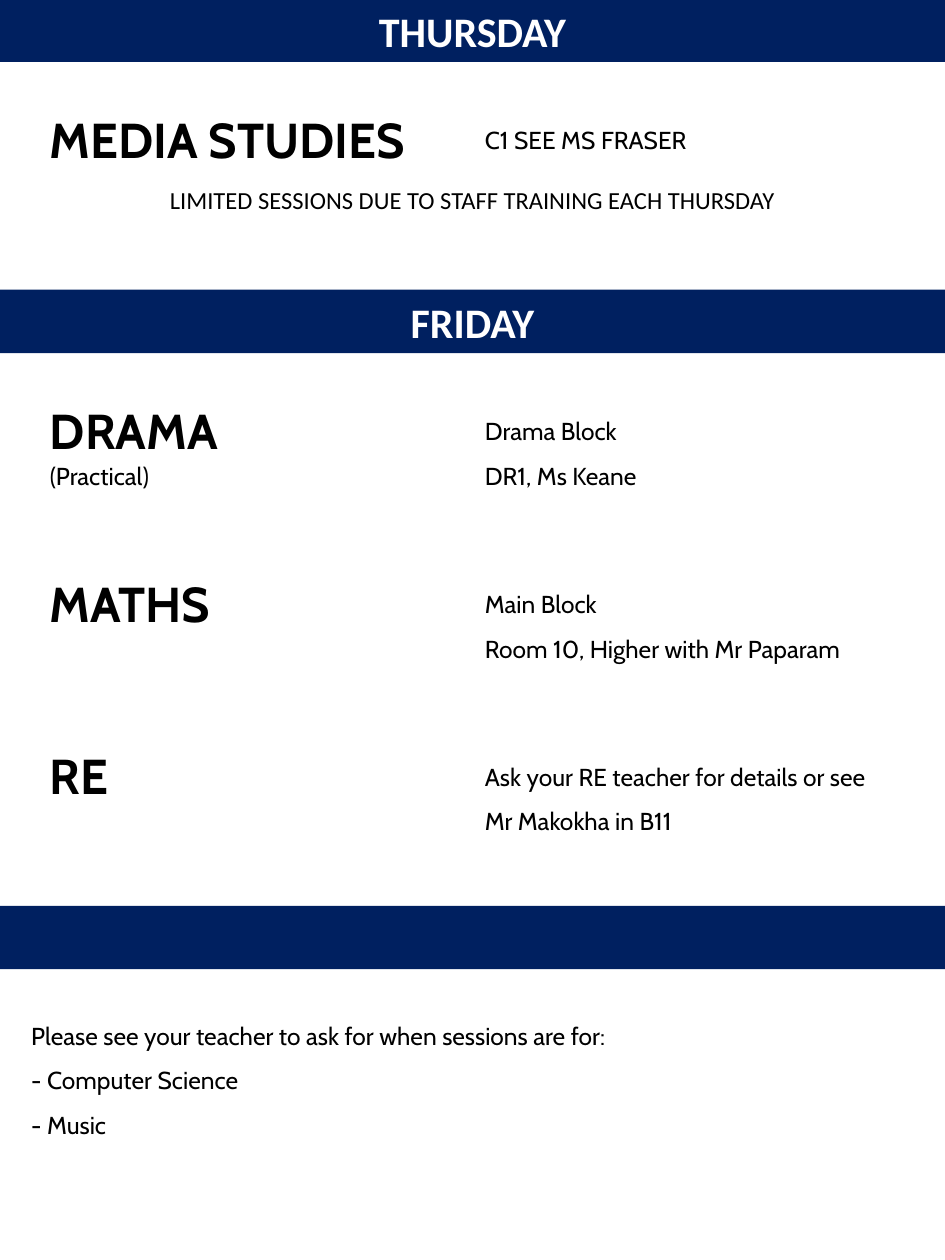
from pptx import Presentation
from pptx.dml.color import RGBColor
from pptx.enum.shapes import MSO_SHAPE as SHAPE
from pptx.enum.text import MSO_ANCHOR as ANCHOR, PP_ALIGN as ALIGN
from pptx.util import Cm, Pt

NAVY, WHITE, BLACK = "002060", "FFFFFF", "000000"
WIDTH, HEIGHT = 19.05, 25.4
BAR_H = 1.28
COL_W = 8.77
SPACER_H = 1.42


def color(hex_code):
    """Return the colour for a hex string."""
    return RGBColor.from_string(hex_code)


def write(tf, lines, align=ALIGN.LEFT, spacing=None):
    """Fill a text frame with (text, size, bold, font, colour) lines."""
    for i, (text, size, bold, name, hex_code) in enumerate(lines):
        p = tf.paragraphs[0] if i == 0 else tf.add_paragraph()
        p.text = text
        p.alignment = align
        p.line_spacing = spacing
        p.font.size = Pt(size)
        p.font.bold = bold
        p.font.name = name
        p.font.color.rgb = color(hex_code)


def body(*texts):
    """Return lines of plain body text."""
    return [(text, 14, False, "Cabin", BLACK) for text in texts]


def add_bar(s, top, day=None):
    """Draw a full-width bar, with the day's name if there is one."""
    sp = s.shapes.add_shape(SHAPE.RECTANGLE, Cm(0), Cm(top), Cm(WIDTH), Cm(BAR_H))
    sp.shadow.inherit = False
    sp.fill.solid()
    sp.fill.fore_color.rgb = color(NAVY)
    sp.line.fill.background()
    if day:
        sp.text_frame.vertical_anchor = ANCHOR.MIDDLE
        write(sp.text_frame, [(day, 24, True, "Calibri", WHITE)], ALIGN.CENTER)


def add_text(s, left, top, width, height, lines, **style):
    """Place a wrapped text box."""
    tf = s.shapes.add_textbox(Cm(left), Cm(top), Cm(width), Cm(height)).text_frame
    tf.word_wrap = True
    write(tf, lines, **style)


def add_sessions(s, left, top, row_h, count, sessions):
    """Place a table of (subject, note, details) on every other of count rows."""
    heights = [SPACER_H if i % 2 else row_h for i in range(count)]
    table = s.shapes.add_table(
        count, 2, Cm(left), Cm(top), Cm(2 * COL_W), Cm(sum(heights))
    ).table
    table.first_row = table.horz_banding = False
    for column in table.columns:
        column.width = Cm(COL_W)
    for row, height in zip(table.rows, heights):
        row.height = Cm(height)
        for cell in row.cells:
            cell.fill.background()
    for i, (subject, note, details) in enumerate(sessions):
        title = [(subject, 28, True, "Cabin", BLACK)]
        write(table.cell(2 * i, 0).text_frame, title + body(*note))
        write(table.cell(2 * i, 1).text_frame, body(*details), spacing=1.5)


def build_timetable(s):
    """Lay out the days, their sessions and the closing note."""
    add_bar(s, -0.03, "THURSDAY")
    add_sessions(s, 0.75, 2.11, 1.46, 2, [
        ("MEDIA STUDIES", [], ["C1 SEE MS FRASER"]),
    ])
    add_bar(s, 5.84, "FRIDAY")
    notice = "LIMITED SESSIONS DUE TO STAFF TRAINING EACH THURSDAY"
    add_text(s, 0, 3.61, WIDTH, 0.86, [(notice, 14, False, "Calibri", BLACK)],
             align=ALIGN.CENTER)
    add_sessions(s, 0.75, 7.98, 2.06, 5, [
        ("DRAMA", ["(Practical)"], ["Drama Block", "DR1, Ms Keane"]),
        ("MATHS", [], ["Main Block", "Room 10, Higher with Mr Paparam"]),
        ("RE", [], ["Ask your RE teacher for details or see Mr Makokha in B11"]),
    ])
    add_bar(s, 18.26)
    closing = body("Please see your teacher to ask for when sessions are for:",
                   "- Computer Science", "- Music")
    add_text(s, 0.38, 20.17, 18.26, 2.84, closing, spacing=1.5)


def main():
    """Build and save the presentation."""
    prs = Presentation()
    prs.slide_width, prs.slide_height = Cm(WIDTH), Cm(HEIGHT)
    build_timetable(prs.slides.add_slide(prs.slide_layouts[6]))
    prs.save("out.pptx")


if __name__ == "__main__":
    main()
